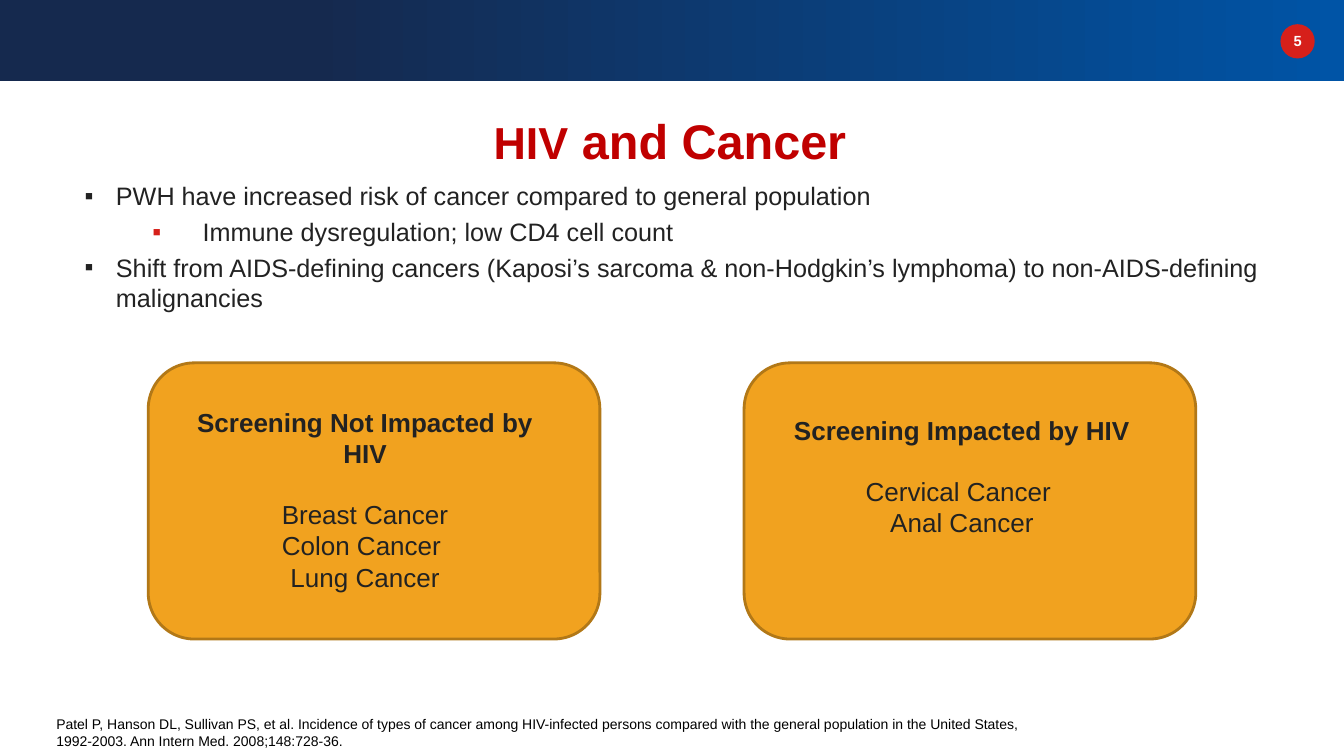
from lxml.etree import SubElement
from pptx import Presentation
from pptx.dml.color import RGBColor
from pptx.enum.shapes import MSO_SHAPE as Shape
from pptx.enum.text import MSO_ANCHOR as Anchor, MSO_AUTO_SIZE as AutoSize, PP_ALIGN as Align
from pptx.oxml.ns import qn
from pptx.util import Inches, Pt

COLORS = {
    "navy": "15294E", "blue": "0054A6", "red": "D6201A", "title": "C00000",
    "ink": "222222", "amber": "F1A21F", "brown": "B27817",
    "white": "FFFFFF", "black": "000000",
}


class SlideBuilder:
    """Holds the style and the current slide, with a method per kind of element."""

    font_name = "Arial"

    def __init__(self):
        self.presentation = Presentation()
        self.presentation.slide_width = Inches(13.33)
        self.presentation.slide_height = Inches(7.5)
        self.slide = self.presentation.slides.add_slide(self.presentation.slide_layouts[1])

    def color(self, name):
        return RGBColor.from_string(COLORS[name])

    def apply(self, target, formats):
        for name, value in formats.items():
            setattr(target, name, value)

    def place(self, shape, box):
        names = ("left", "top", "width", "height")
        self.apply(shape, dict(zip(names, map(Inches, box))))

    def frame(self, shape, anchor=Anchor.TOP):
        frame = shape.text_frame
        self.apply(frame, {"word_wrap": True, "auto_size": AutoSize.NONE,
                           "vertical_anchor": anchor})
        return frame

    def paragraph(self, frame, first, align=Align.LEFT, space=0):
        paragraph = frame.paragraphs[0] if first else frame.add_paragraph()
        self.apply(paragraph, {"alignment": align, "space_before": Pt(space)})
        return paragraph

    def run(self, paragraph, text, size, color, bold=False):
        run = paragraph.add_run()
        run.text = text
        self.apply(run.font, {"name": self.font_name, "size": Pt(size), "bold": bold})
        run.font.color.rgb = self.color(color)

    def shape(self, kind, box, fill, line=None):
        shape = self.slide.shapes.add_shape(kind, *map(Inches, box))
        shape.shadow.inherit = False
        shape.fill.solid()
        shape.fill.fore_color.rgb = self.color(fill)
        if line:
            shape.line.color.rgb = self.color(line)
            shape.line.width = Pt(2)
        else:
            shape.line.fill.background()
        return shape

    def banner(self, box):
        fill = self.shape(Shape.RECTANGLE, box, "navy").fill
        fill.gradient()
        fill.gradient_angle = 0
        for stop, position, name in zip(fill.gradient_stops, (0.23, 1), ("navy", "blue")):
            stop.position = position
            stop.color.rgb = self.color(name)

    def text(self, box, text, size, color, **formats):
        bold = formats.pop("bold", False)
        frame = self.frame(self.slide.shapes.add_textbox(*map(Inches, box)))
        self.run(self.paragraph(frame, True, **formats), text, size, color, bold)

    def title(self, box, parts):
        title = self.slide.shapes.title
        self.place(title, box)
        paragraph = self.paragraph(self.frame(title, Anchor.MIDDLE), True, Align.CENTER)
        for text, size in parts:
            self.run(paragraph, text, size, "title", bold=True)

    def bullets(self, box, items):
        body = self.slide.placeholders[1]
        self.place(body, box)
        frame = self.frame(body)
        levels = ((0.31, -0.31, "ink"), (1.17, -0.5, "red"))
        for index, (level, text) in enumerate(items):
            margin, indent, color = levels[level]
            paragraph = self.paragraph(frame, index == 0, space=4 if index else 0)
            paragraph.level = level
            properties = paragraph._p.get_or_add_pPr()
            properties.set("marL", str(Inches(margin)))
            properties.set("indent", str(Inches(indent)))
            bullet_color = SubElement(properties, qn("a:buClr"))
            SubElement(bullet_color, qn("a:srgbClr"), val=COLORS[color])
            SubElement(properties, qn("a:buFont"), typeface=self.font_name)
            SubElement(properties, qn("a:buChar"), char="▪")
            self.run(paragraph, text, 18, "ink")

    def card(self, left, label_box, heading, cancers):
        self.shape(Shape.ROUNDED_RECTANGLE, (left, 3.6, 4.48, 2.74), "amber", "brown")
        frame = self.frame(self.shape(Shape.RECTANGLE, label_box, "amber"))
        for index, text in enumerate([heading, *cancers]):
            gap = 21.4 if index == 1 else 0
            paragraph = self.paragraph(frame, index == 0, Align.CENTER, gap)
            self.run(paragraph, text, 18.6, "ink", bold=index == 0)


def main():
    builder = SlideBuilder()
    builder.banner((0, 0, 13.33, 0.8))
    builder.shape(Shape.OVAL, (12.7, 0.24, 0.34, 0.34), "red")
    builder.text((12.65, 0.27, 0.44, 0.28), "5", 10.5, "white", bold=True, align=Align.CENTER)
    builder.title((0.74, 1.03, 11.81, 0.71), [("HIV", 32), (" and Cancer", 34.7)])
    builder.bullets((0.74, 1.74, 12.13, 5.31), [
        (0, "PWH have increased risk of cancer compared to general population"),
        (1, "Immune dysregulation; low CD4 cell count"),
        (0, "Shift from AIDS-defining cancers (Kaposi’s sarcoma & non-Hodgkin’s lymphoma) "
            "to non-AIDS-defining malignancies"),
    ])
    builder.card(1.47, (1.66, 3.98, 3.92, 1.98), "Screening Not Impacted by HIV",
                 ["Breast Cancer", "Colon Cancer ", "Lung Cancer"])
    builder.card(7.38, (7.69, 4.06, 3.7, 1.98), "Screening Impacted by HIV",
                 ["Cervical Cancer ", "Anal Cancer"])
    builder.text((0.46, 7.05, 9.79, 0.44),
                 "Patel P, Hanson DL, Sullivan PS, et al. Incidence of types of cancer among "
                 "HIV-infected persons compared with the general population in the United "
                 "States, 1992-2003. Ann Intern Med. 2008;148:728-36.", 10, "black")
    builder.presentation.save("out.pptx")


if __name__ == "__main__":
    main()
